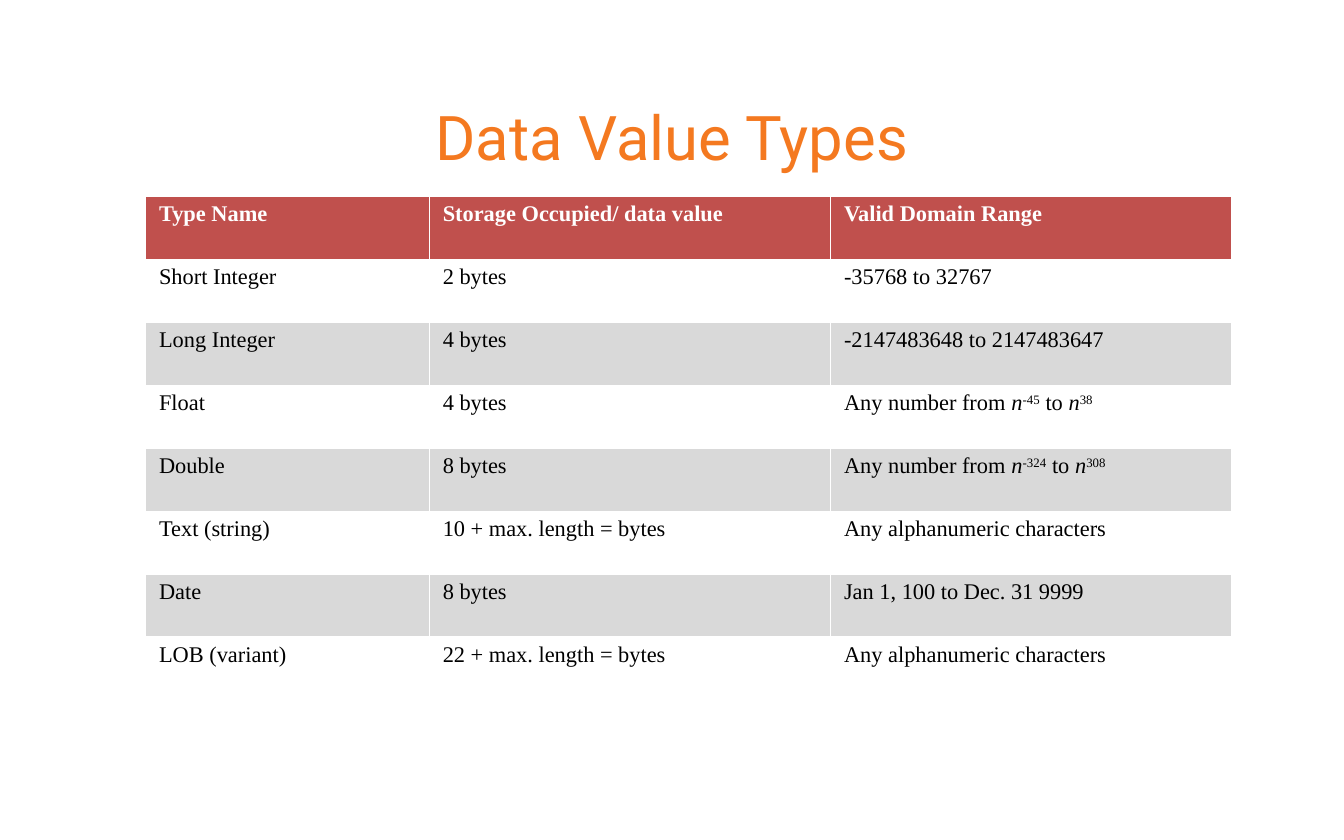
from lxml import etree
from pptx import Presentation
from pptx.dml.color import RGBColor
from pptx.enum.text import MSO_ANCHOR, PP_ALIGN
from pptx.oxml.ns import qn
from pptx.util import Pt

CENTER = PP_ALIGN.CENTER
MIDDLE = MSO_ANCHOR.MIDDLE
ORANGE, RED, GRAY = "F47920", "C0504D", "D9D9D9"
WHITE, BLACK = "FFFFFF", "000000"
SERIF = "Times New Roman"
COLUMN_WIDTHS = (152, 215, 215)
ROW_HEIGHT = 33.75


def power_range(low, high):
    """Return the runs of a range between two powers of n."""
    return [("Any number from ", ""), ("n", "italic"), (low, "super"),
            (" to ", ""), ("n", "italic"), (high, "super")]


ROWS = [
    ("Type Name", "Storage Occupied/ data value", "Valid Domain Range"),
    ("Short Integer", "2 bytes", "-35768 to 32767"),
    ("Long Integer", "4 bytes", "-2147483648 to 2147483647"),
    ("Float", "4 bytes", power_range("-45", "38")),
    ("Double", "8 bytes", power_range("-324", "308")),
    ("Text (string)", "10 + max. length = bytes", "Any alphanumeric characters"),
    ("Date", "8 bytes", "Jan 1, 100 to Dec. 31 9999"),
    ("LOB (variant)", "22 + max. length = bytes", "Any alphanumeric characters"),
]


def rgb(color):
    """Turn a hex string into a colour."""
    return RGBColor.from_string(color)


def add_run(p, text, font, size, color, style="", bold=False):
    """Add one run, optionally italic or superscript."""
    r = p.add_run()
    r.text = text
    r.font.name = font
    r.font.size = Pt(size)
    r.font.bold = bold
    r.font.italic = style == "italic"
    r.font.color.rgb = rgb(color)
    if style == "super":
        r.font._element.set("baseline", "30000")


def add_title(s, text):
    """Add the centred slide title."""
    tf = s.shapes.add_textbox(Pt(54), Pt(35.5), Pt(612), Pt(75)).text_frame
    tf.word_wrap = True
    tf.vertical_anchor = MIDDLE
    p = tf.paragraphs[0]
    p.alignment = CENTER
    add_run(p, text, "Roboto", 33, ORANGE)


def set_borders(cell, color, width):
    """Draw a solid line on all four sides of a cell."""
    tc_pr = cell._tc.get_or_add_tcPr()
    for side in ("lnL", "lnR", "lnT", "lnB"):
        ln = etree.SubElement(tc_pr, qn(f"a:{side}"), w=str(Pt(width)))
        fill = etree.SubElement(ln, qn("a:solidFill"))
        etree.SubElement(fill, qn("a:srgbClr"), val=color)


def fill_cell(cell, content, fill, color, bold):
    """Set the text, borders and background of a cell."""
    set_borders(cell, WHITE, 1)
    cell.fill.solid()
    cell.fill.fore_color.rgb = rgb(fill)
    cell.margin_left = cell.margin_right = Pt(7.2)
    cell.margin_top = cell.margin_bottom = Pt(3)
    p = cell.text_frame.paragraphs[0]
    p_pr = p._p.get_or_add_pPr()
    p_pr.set("marL", str(Pt(27)))
    p_pr.set("indent", str(Pt(-27)))
    runs = [(content, "")] if isinstance(content, str) else content
    for text, style in runs:
        add_run(p, text, SERIF, 12, color, style, bold)


def add_type_table(s):
    """Add the table of data types with a header and banded rows."""
    table = s.shapes.add_table(
        len(ROWS), len(COLUMN_WIDTHS), Pt(78), Pt(105.25),
        Pt(sum(COLUMN_WIDTHS)), Pt(ROW_HEIGHT * len(ROWS))).table
    for column, width in zip(table.columns, COLUMN_WIDTHS):
        column.width = Pt(width)
    for i, row in enumerate(ROWS):
        table.rows[i].height = Pt(ROW_HEIGHT)
        header = i == 0
        fill = RED if header else WHITE if i % 2 else GRAY
        for j, content in enumerate(row):
            fill_cell(table.cell(i, j), content, fill,
                      WHITE if header else BLACK, header)


def main():
    """Build and save the slide."""
    prs = Presentation()
    prs.slide_width, prs.slide_height = Pt(720), Pt(450)
    s = prs.slides.add_slide(prs.slide_layouts[6])
    add_title(s, "Data Value Types")
    add_type_table(s)
    prs.save("out.pptx")


if __name__ == "__main__":
    main()
